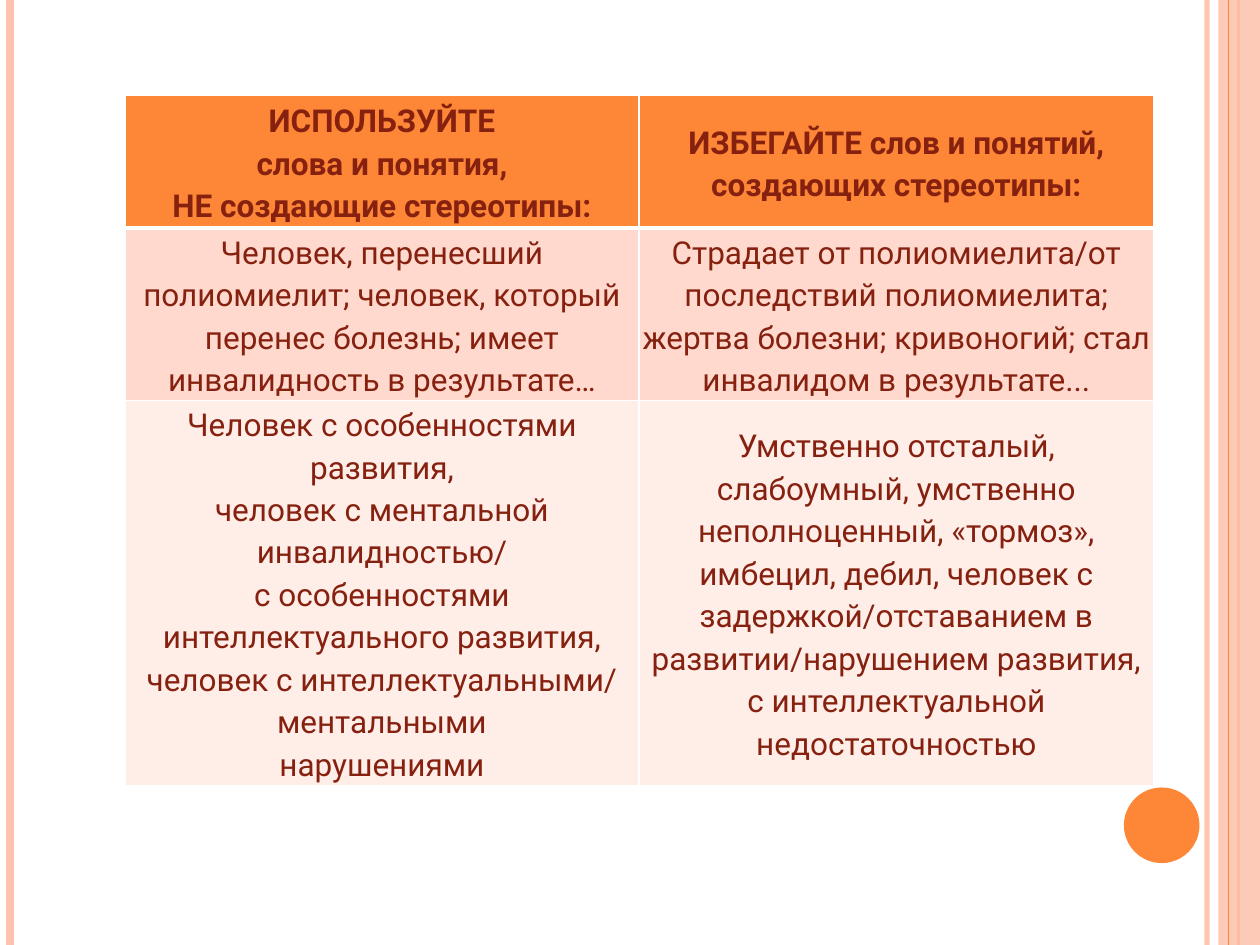
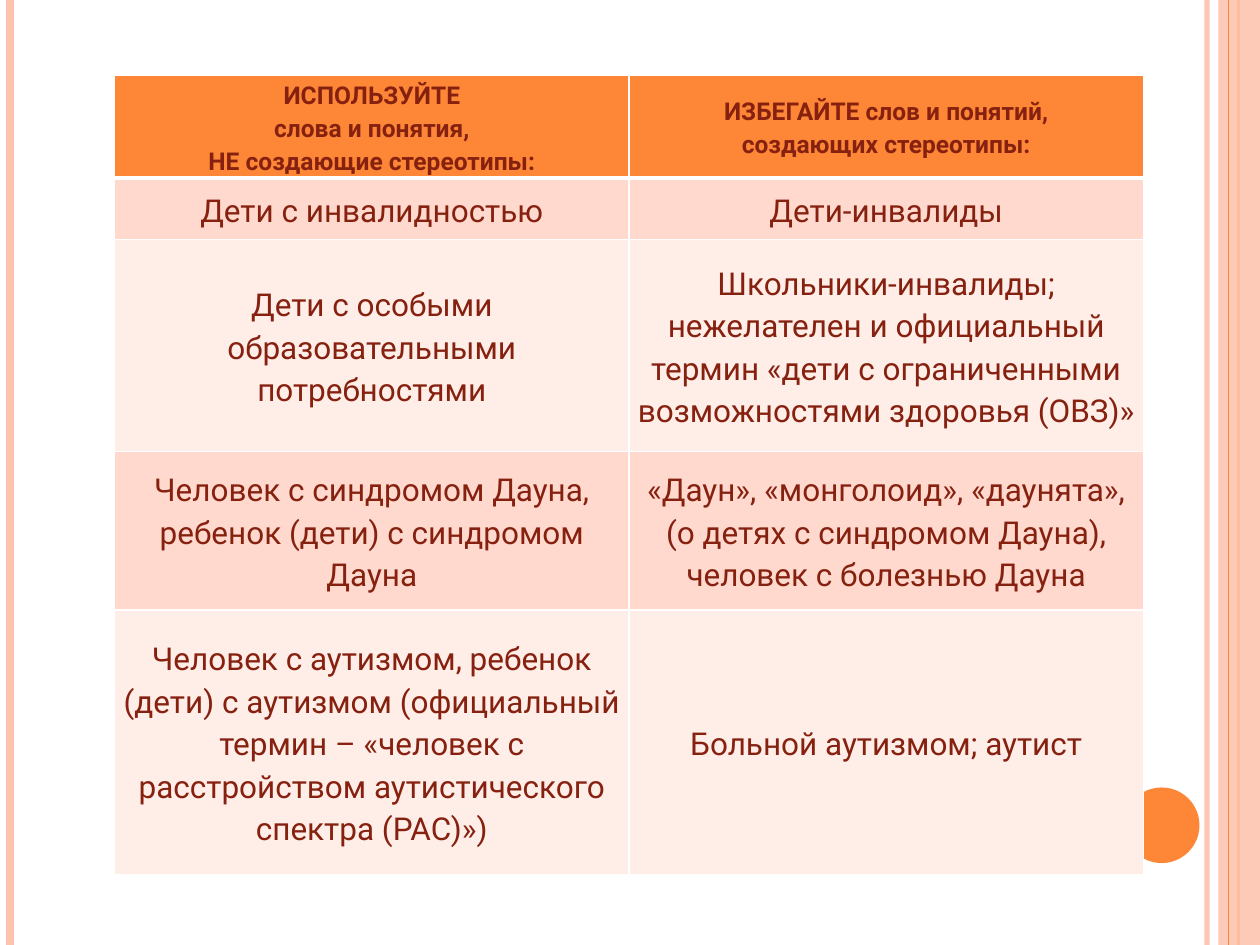
from dataclasses import dataclass

from lxml import etree
from pptx import Presentation
from pptx import util as u
from pptx.dml.color import RGBColor
from pptx.enum import shapes, text
from pptx.oxml.ns import qn


@dataclass(frozen=True)
class Theme:
    font: str = "Roboto"
    ink: str = "862110"
    accent: str = "FE8637"
    edge: str = "FEC3AE"
    paper: str = "FFFFFF"
    bands: tuple = ("FFD9CE", "FFEDE8")
    body_size: int = 18
    small_size: int = 14
    line_spacing: float = 1.15
    rule: int = 1
    header_rule: int = 3


COLUMNS, ROWS = 100, 75

HEADER = (
    ("ИСПОЛЬЗУЙТЕ", "слова и понятия,\nНЕ создающие стереотипы:"),
    ("ИЗБЕГАЙТЕ слов и понятий,\nсоздающих стереотипы:",),
)

ILLNESS_TERMS = (
    (("Человек, перенесший полиомиелит; человек, который перенес болезнь; "
      "имеет инвалидность в результате…",),
     ("Страдает от полиомиелита/от последствий полиомиелита; жертва болезни; "
      "кривоногий; стал инвалидом в результате...",)),
    (("Человек с особенностями развития,\nчеловек с ментальной инвалидностью/\n"
      "с особенностями интеллектуального развития, "
      "человек с интеллектуальными/ ментальными\nнарушениями",),
     ("Умственно отсталый, слабоумный, умственно неполноценный, «тормоз», "
      "имбецил, дебил, человек с задержкой/отставанием в "
      "развитии/нарушением развития, с интеллектуальной недостаточностью",)),
)

CHILDREN_TERMS = (
    (("Дети с инвалидностью",), ("Дети-инвалиды",)),
    (("Дети с особыми образовательными потребностями",),
     ("Школьники-инвалиды; нежелателен и официальный термин "
      "«дети с ограниченными возможностями здоровья (ОВЗ)»",)),
    (("Человек с синдромом Дауна, ребенок (дети) с синдромом Дауна",),
     ("«Даун», «монголоид», «даунята», (о детях с синдромом Дауна), "
      "человек с болезнью Дауна",)),
    (("Человек с аутизмом, ребенок (дети) с аутизмом (официальный термин – "
      "«человек с расстройством аутистического спектра (РАС)»)",),
     ("Больной аутизмом; аутист",)),
)


def write(frame, paragraphs, *, font, size, color, bold=False, spacing=1.0):
    """Fill a text frame; a newline inside a paragraph is a line break."""
    frame.word_wrap = True
    for index, line in enumerate(paragraphs):
        para = frame.add_paragraph() if index else frame.paragraphs[0]
        para.text = line
        para.alignment = text.PP_ALIGN.CENTER
        para.line_spacing = spacing
        for span in para.runs:
            span.font.name = font
            span.font.size = u.Pt(size)
            span.font.bold = bold
            span.font.color.rgb = RGBColor.from_string(color)


def set_opacity(element, percent):
    for color in element.iter(qn("a:srgbClr")):
        etree.SubElement(color, qn("a:alpha"), val=str(percent * 1000))


def add_border(cell, side, color, points):
    properties = cell._tc.get_or_add_tcPr()
    line = etree.SubElement(properties, qn(f"a:ln{side}"), w=str(u.Pt(points)))
    fill = etree.SubElement(line, qn("a:solidFill"))
    etree.SubElement(fill, qn("a:srgbClr"), val=color)


class Builder:
    def __init__(self, deck, theme):
        self.deck = deck
        self.theme = theme
        self.page = None

    def x(self, columns):
        return u.Emu(round(self.deck.slide_width * columns / COLUMNS))

    def y(self, rows):
        return u.Emu(round(self.deck.slide_height * rows / ROWS))

    def start_page(self):
        self.page = self.deck.slides.add_slide(self.deck.slide_layouts[6])
        fill = self.page.background.fill
        fill.solid()
        fill.fore_color.rgb = RGBColor.from_string(self.theme.paper)
        self.draw_frame()

    def draw_frame(self):
        theme = self.theme
        self.stripe(95.8, theme.edge, 3, opacity=93)
        self.stripe(0.8, theme.edge, 4.5)
        self.stripe(98.3, theme.accent, 1.5)
        self.shape(shapes.MSO_SHAPE.RECTANGLE, 96.7, 0, 3.3, ROWS, theme.edge, opacity=87)
        self.stripe(97.5, theme.accent, 0.75)
        self.shape(shapes.MSO_SHAPE.OVAL, 89.2, 62.5, 6, 6, theme.accent)

    def stripe(self, column, color, points, opacity=100):
        """Draw a vertical line over the full height of the page."""
        line = self.page.shapes.add_connector(
            shapes.MSO_CONNECTOR.STRAIGHT,
            self.x(column), 0, self.x(column), self.y(ROWS))
        line.line.color.rgb = RGBColor.from_string(color)
        line.line.width = u.Pt(points)
        properties = line._element.spPr
        etree.SubElement(properties, qn("a:effectLst"))
        if opacity < 100:
            set_opacity(properties, opacity)

    def shape(self, kind, left, top, width, height, color, opacity=100):
        box = self.page.shapes.add_shape(
            kind, self.x(left), self.y(top), self.x(width), self.y(height))
        box.shadow.inherit = False
        box.fill.solid()
        box.fill.fore_color.rgb = RGBColor.from_string(color)
        box.line.fill.background()
        if opacity < 100:
            set_opacity(box._element.spPr, opacity)

    def terms_table(self, left, top, heights, terms, header_size):
        """Set preferred wording beside wording to avoid, under a shared header."""
        theme = self.theme
        content = (HEADER, *terms)
        table = self.page.shapes.add_table(
            len(content), len(HEADER), self.x(left), self.y(top),
            self.x(81.66), self.y(sum(heights))).table
        table.horz_banding = False
        for row, height in zip(table.rows, heights):
            row.height = self.y(height)
        for r, texts in enumerate(content):
            header = r == 0
            for c, paragraphs in enumerate(texts):
                cell = table.cell(r, c)
                self.style_cell(cell, r)
                write(cell.text_frame, paragraphs, font=theme.font,
                      size=header_size if header else theme.body_size,
                      color=theme.ink, bold=header, spacing=theme.line_spacing)

    def style_cell(self, cell, row):
        theme = self.theme
        cell.margin_left = cell.margin_right = self.x(0.1)
        cell.margin_top = cell.margin_bottom = self.y(0.1)
        cell.vertical_anchor = text.MSO_ANCHOR.MIDDLE
        widths = {"L": theme.rule, "R": theme.rule,
                  "T": theme.header_rule if row == 1 else theme.rule,
                  "B": theme.header_rule if row == 0 else theme.rule}
        for side, points in widths.items():
            add_border(cell, side, theme.paper, points)
        color = theme.bands[(row - 1) % 2] if row else theme.accent
        cell.fill.solid()
        cell.fill.fore_color.rgb = RGBColor.from_string(color)


def main():
    deck = Presentation()
    deck.slide_width, deck.slide_height = u.Inches(10), u.Inches(7.5)
    theme = Theme()
    builder = Builder(deck, theme)

    builder.start_page()
    builder.terms_table(9.9, 7.6, (10.5, 13.7, 30.5), ILLNESS_TERMS, theme.body_size)

    builder.start_page()
    builder.terms_table(9.1, 6, (8.1, 4.9, 16.8, 12.6, 21), CHILDREN_TERMS, theme.small_size)

    deck.save("out.pptx")


if __name__ == "__main__":
    main()
